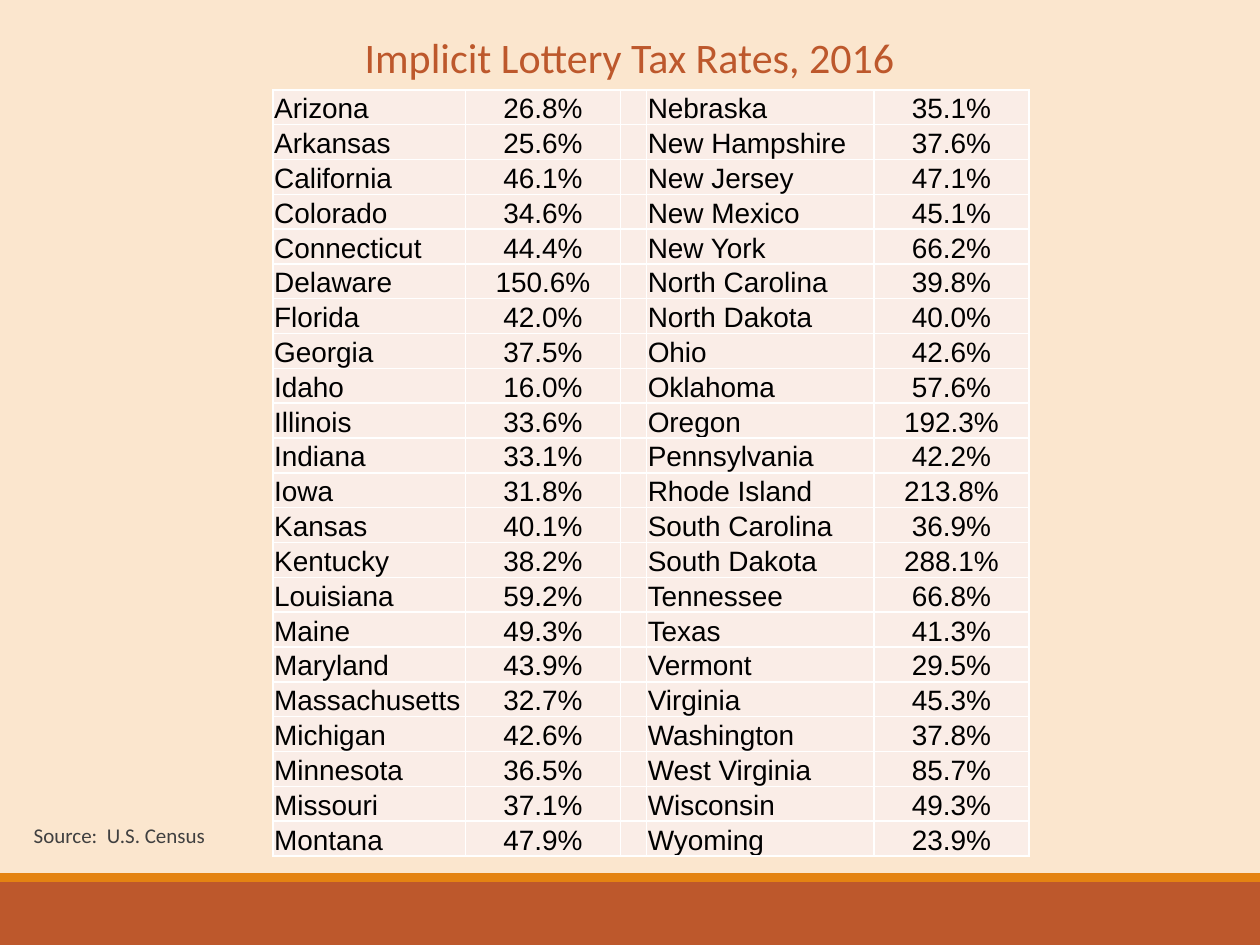
from lxml import etree
from pptx import Presentation
from pptx.dml.color import RGBColor
from pptx.enum import shapes, text
from pptx.oxml.ns import qn
from pptx.util import Pt

TITLE = "Implicit Lottery Tax Rates, 2016"
SOURCE = "Source:  U.S. Census"
RATES = [
    ("Arizona", "26.8%"), ("Arkansas", "25.6%"), ("California", "46.1%"),
    ("Colorado", "34.6%"), ("Connecticut", "44.4%"), ("Delaware", "150.6%"),
    ("Florida", "42.0%"), ("Georgia", "37.5%"), ("Idaho", "16.0%"),
    ("Illinois", "33.6%"), ("Indiana", "33.1%"), ("Iowa", "31.8%"),
    ("Kansas", "40.1%"), ("Kentucky", "38.2%"), ("Louisiana", "59.2%"),
    ("Maine", "49.3%"), ("Maryland", "43.9%"), ("Massachusetts", "32.7%"),
    ("Michigan", "42.6%"), ("Minnesota", "36.5%"), ("Missouri", "37.1%"),
    ("Montana", "47.9%"),
    ("Nebraska", "35.1%"), ("New Hampshire", "37.6%"), ("New Jersey", "47.1%"),
    ("New Mexico", "45.1%"), ("New York", "66.2%"), ("North Carolina", "39.8%"),
    ("North Dakota", "40.0%"), ("Ohio", "42.6%"), ("Oklahoma", "57.6%"),
    ("Oregon", "192.3%"), ("Pennsylvania", "42.2%"), ("Rhode Island", "213.8%"),
    ("South Carolina", "36.9%"), ("South Dakota", "288.1%"), ("Tennessee", "66.8%"),
    ("Texas", "41.3%"), ("Vermont", "29.5%"), ("Virginia", "45.3%"),
    ("Washington", "37.8%"), ("West Virginia", "85.7%"), ("Wisconsin", "49.3%"),
    ("Wyoming", "23.9%"),
]
COLUMNS = [110, 88.5, 15, 130, 88.5]
TABLE_LEFT, TABLE_TOP, ROW_HEIGHT = 156, 51.3, 19.9
WIDTH, HEIGHT = 720, 540
# top, height, colour
BANDS = [(504, 36, "BD582C"), (499, 5, "E48312")]
# text, (left, top, width, height), size, colour, alignment
LABELS = [
    (TITLE, (199.5, 18, 320.5, 33), 24, "BD582C", text.PP_ALIGN.CENTER),
    (SOURCE, (12.2, 468, 113.8, 20), 12, "404040", text.PP_ALIGN.LEFT),
]


def rgb(value):
    return RGBColor.from_string(value)


def style(p, font, size, color, align):
    p.alignment = align
    for r in p.runs:
        r.font.name, r.font.size = font, Pt(size)
        r.font.color.rgb = rgb(color)


def add_band(s, top, height, color):
    sp = s.shapes.add_shape(shapes.MSO_SHAPE.RECTANGLE, 0, Pt(top), Pt(WIDTH), Pt(height))
    sp.shadow.inherit = False
    sp.fill.solid()
    sp.fill.fore_color.rgb = rgb(color)
    sp.line.fill.background()


def add_label(s, label, box, size, color, align):
    tf = s.shapes.add_textbox(*map(Pt, box)).text_frame
    tf.word_wrap = False
    tf.auto_size = text.MSO_AUTO_SIZE.SHAPE_TO_FIT_TEXT
    p = tf.paragraphs[0]
    p.text = label
    p.line_spacing, p.space_before, p.space_after = 0.9, Pt(6.8), Pt(1.1)
    pPr = p._p.get_or_add_pPr()
    pPr.set("marL", str(Pt(4.5)))
    pPr.set("indent", str(-Pt(4.5)))
    style(p, "Calibri", size, color, align)


def add_borders(cell, color):
    tcPr = cell._tc.get_or_add_tcPr()
    for i, side in enumerate(("lnL", "lnR", "lnT", "lnB")):
        ln = etree.Element(qn("a:" + side), w=str(Pt(1)))
        fill = etree.SubElement(ln, qn("a:solidFill"))
        etree.SubElement(fill, qn("a:srgbClr"), val=color)
        tcPr.insert(i, ln)


def fill_cell(cell, value, align):
    cell.margin_left = cell.margin_right = cell.margin_top = Pt(0.7)
    cell.margin_bottom = 0
    cell.vertical_anchor = text.MSO_ANCHOR.BOTTOM
    cell.fill.solid()
    cell.fill.fore_color.rgb = rgb("FAEDE7")
    add_borders(cell, "FFFFFF")
    p = cell.text_frame.paragraphs[0]
    if value:
        p.text = value
        style(p, "Arial", 16, "000000", align)
    else:
        # Keeps an empty cell from stretching its row
        etree.SubElement(p._p, qn("a:endParaRPr"), sz="1200")


def add_rates(s):
    half = len(RATES) // 2
    table = s.shapes.add_table(half, len(COLUMNS), Pt(TABLE_LEFT), Pt(TABLE_TOP),
                               Pt(sum(COLUMNS)), Pt(half * ROW_HEIGHT)).table
    table.first_row = table.horz_banding = False
    for column, width in zip(table.columns, COLUMNS):
        column.width = Pt(width)
    for row, left, right in zip(table.rows, RATES[:half], RATES[half:]):
        row.height = Pt(ROW_HEIGHT)
        for cell, value in zip(row.cells, (*left, "", *right)):
            is_rate = value.endswith("%")
            fill_cell(cell, value, text.PP_ALIGN.CENTER if is_rate else text.PP_ALIGN.LEFT)


def main():
    prs = Presentation()
    prs.slide_width, prs.slide_height = Pt(WIDTH), Pt(HEIGHT)
    s = prs.slides.add_slide(prs.slide_layouts[6])
    s.background.fill.solid()
    s.background.fill.fore_color.rgb = rgb("FBE6CE")
    for band in BANDS:
        add_band(s, *band)
    for label in LABELS:
        add_label(s, *label)
    add_rates(s)
    prs.save("out.pptx")


if __name__ == "__main__":
    main()
